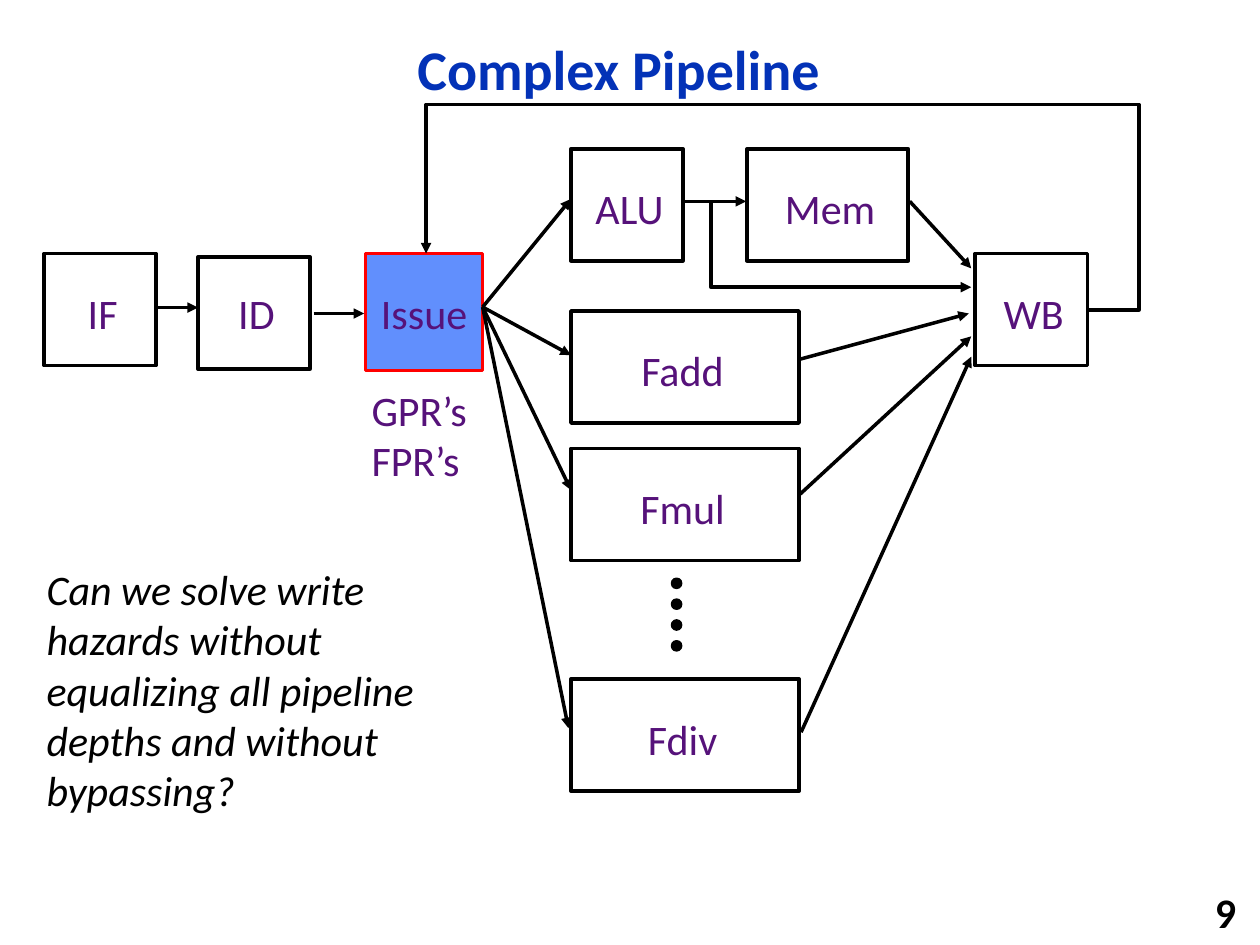
import pptx
import pptx.util
import pptx.dml.color
import pptx.enum.shapes
import pptx.enum.text
import pptx.oxml.ns
import lxml.etree

Cm = pptx.util.Cm
Pt = pptx.util.Pt
RGBColor = pptx.dml.color.RGBColor
Shape = pptx.enum.shapes.MSO_SHAPE
Align = pptx.enum.text.PP_ALIGN
Anchor = pptx.enum.text.MSO_ANCHOR
AutoSize = pptx.enum.text.MSO_AUTO_SIZE

BLACK = RGBColor(0x00, 0x00, 0x00)
BLUE = RGBColor(0x03, 0x32, 0xB7)
PURPLE = RGBColor(0x56, 0x12, 0x7A)
SKY = RGBColor(0x61, 0x8F, 0xFD)
RED = RGBColor(0xFF, 0x00, 0x00)


class PipelineSlide:
    """Holds the style and the slide; all lengths are centimetres."""

    font = "Calibri"
    size = 24
    line_width = 2
    label_height = 1.27

    def __init__(self, deck):
        self.slide = deck.slides.add_slide(deck.slide_layouts[6])
        self.shapes = self.slide.shapes

    def text(self, text, x, y, width, height, color=PURPLE, size=size,
             align=Align.LEFT, anchor=Anchor.TOP, wrap=True,
             bold=False, italic=False, spacing=1.0):
        box = self.shapes.add_textbox(Cm(x), Cm(y), Cm(width), Cm(height))
        frame = box.text_frame
        frame.word_wrap = wrap
        frame.auto_size = AutoSize.NONE if wrap else AutoSize.SHAPE_TO_FIT_TEXT
        frame.vertical_anchor = anchor
        frame.text = text
        for para in frame.paragraphs:
            para.alignment = align
            para.line_spacing = spacing
            for span in para.runs:
                span.font.name = self.font
                span.font.size = Pt(size)
                span.font.color.rgb = color
                span.font.bold = bold
                span.font.italic = italic

    def outline(self, shape, color=BLACK, width=line_width, fill=None):
        shape.shadow.inherit = False
        shape.line.color.rgb = color
        shape.line.width = Pt(width)
        if fill is None:
            shape.fill.background()
        else:
            shape.fill.solid()
            shape.fill.fore_color.rgb = fill

    def stage(self, name, x, y, width, label_width, height=2.26, drop=0.56,
              shift=0.05, color=BLACK, fill=None):
        box = self.shapes.add_shape(Shape.RECTANGLE, Cm(x), Cm(y), Cm(width), Cm(height))
        self.outline(box, color, fill=fill)
        self.text(name, x + (width - label_width) / 2 + shift, y + drop, label_width,
                  self.label_height, align=Align.CENTER, wrap=False)

    def dot(self, x, y, diameter):
        dot = self.shapes.add_shape(Shape.OVAL, Cm(x), Cm(y), Cm(diameter), Cm(diameter))
        self.outline(dot, width=1, fill=BLACK)

    def add_arrowhead(self, line):
        tail = lxml.etree.SubElement(line.line._get_or_add_ln(),
                                     pptx.oxml.ns.qn("a:tailEnd"))
        tail.set("type", "triangle")

    def arrow(self, start, end):
        line = self.shapes.add_connector(
            pptx.enum.shapes.MSO_CONNECTOR.STRAIGHT,
            *(Cm(value) for value in start + end))
        line.line.color.rgb = BLACK
        line.line.width = Pt(self.line_width)
        self.add_arrowhead(line)
        lxml.etree.SubElement(line._element.spPr, pptx.oxml.ns.qn("a:effectLst"))

    def bent_arrow(self, *points):
        corners = [(Cm(x), Cm(y)) for x, y in points]
        builder = self.shapes.build_freeform(*corners[0], scale=1.0)
        builder.add_line_segments(corners[1:], close=False)
        line = builder.convert_to_shape()
        self.outline(line)
        self.add_arrowhead(line)


def main():
    deck = pptx.Presentation()
    deck.slide_width, deck.slide_height = Cm(25.4), Cm(19.05)
    page = PipelineSlide(deck)

    # Title and page number
    page.text("Complex Pipeline", 2.34, 0.43, 20.27, 2.06, color=BLUE, size=32,
              align=Align.CENTER, anchor=Anchor.MIDDLE, bold=True, spacing=0.9)
    page.text("9", 19.89, 17.98, 5.28, 0.81, color=BLACK, align=Align.RIGHT,
              anchor=Anchor.MIDDLE, bold=True)

    # Front end and write back
    page.stage("IF", 0.89, 5.11, 2.26, 1.12)
    page.stage("ID", 3.99, 5.18, 2.26, 1.83, drop=0.5)
    page.stage("Issue", 7.37, 5.11, 2.36, 2.77, height=2.36, shift=0,
               color=RED, fill=SKY)
    page.stage("WB", 19.66, 5.11, 2.26, 1.73)

    # Execution units
    unit_x = 11.51
    page.stage("ALU", unit_x, 3, 2.26, 1.9)
    page.stage("Mem", 15.06, 3, 3.25, 2.34)
    for name, y in (("Fadd", 6.27), ("Fmul", 9.04), ("Fdiv", 13.69)):
        page.stage(name, unit_x, y, 4.6, 2.3, shift=-0.05)

    # Further units between Fmul and Fdiv
    for index in range(4):
        page.dot(13.54, 11.66 + 0.42 * index, 0.2)

    # IF to ID to Issue
    page.arrow((3.18, 6.2), (3.99, 6.2))
    page.arrow((6.32, 6.32), (7.34, 6.32))

    # Issue to the units
    for end in ((11.51, 4.01), (11.51, 7.16), (11.51, 9.88), (11.46, 14.68)):
        page.arrow((9.73, 6.19), end)

    # Units to write back
    for start, end in (
        ((18.34, 4.06), (19.58, 5.41)),
        ((16.13, 7.24), (19.53, 6.32)),
        ((16.13, 9.96), (19.58, 6.78)),
        ((16.15, 14.76), (19.58, 7.19)),
    ):
        page.arrow(start, end)

    # ALU to Mem, and around Mem
    page.arrow((14.35, 4.06), (15.04, 4.06))
    page.bent_arrow((13.79, 4.06), (14.33, 4.06), (14.33, 5.79), (19.58, 5.79))

    # Write back to Issue
    page.bent_arrow((21.95, 6.25), (22.96, 6.25), (22.96, 2.11),
                    (8.59, 2.11), (8.59, 5.11))

    # Register files and question
    page.text("GPR’s\nFPR’s", 7.24, 7.62, 2.49, 2.31, wrap=False)
    page.text("Can we solve write hazards without equalizing all pipeline "
              "depths and without bypassing?",
              0.69, 11.23, 9.14, 5.38, color=BLACK, italic=True)

    deck.save("out.pptx")


if __name__ == "__main__":
    main()
